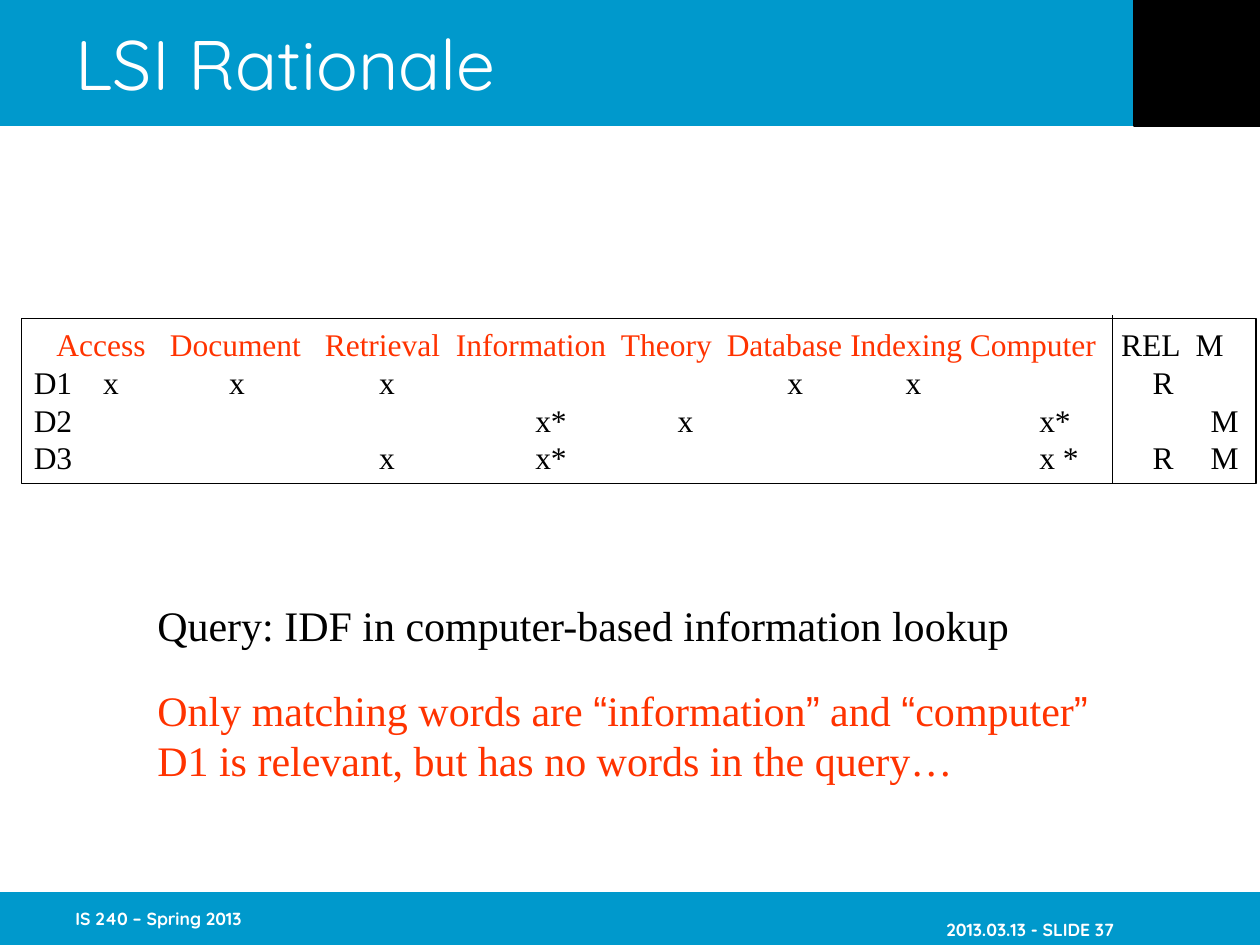
from pptx import Presentation
from pptx import util as u
from pptx.dml.color import RGBColor
from pptx.enum import shapes, text
from pptx.oxml.ns import qn
from lxml import etree

In = u.Inches
BLUE = RGBColor(0x00, 0x99, 0xCC)
RED = RGBColor(0xFF, 0x33, 0x00)
BLACK = RGBColor(0, 0, 0)
WHITE = RGBColor(0xFF, 0xFF, 0xFF)
SANS, SERIF, QUOTE = "Quicksand", "Times New Roman", "Arial"

# Content
TITLE = "LSI Rationale"
FOOT = "IS 240 – Spring 2013"
STAMP = "2013.03.13 - SLIDE 37"
TERMS = ["Access", "Document", "Retrieval", "Information",
         "Theory", "Database", "Indexing", "Computer"]
JUDGED = ["REL", "M"]
DOCS = [
    ["D1", "x", "x", "x", "", "", "x", "x", "", "R"],
    ["D2", "", "", "", "x*", "x", "", "", "x*", "", "M"],
    ["D3", "", "", "x", "x*", "", "", "", "x *", "R", "M"],
]
QUERY = "Query: IDF in computer-based information lookup"
NOTES = [
    ["Only matching words are ", "“", "information", "”", " and ",
     "“", "computer", "”"],
    ["D1 is relevant, but has no words in the query…"],
]

# Tab stops, in inches from the left edge of the grid's text
HEADS = [0.18, 1.08, 2.31, 3.35, 4.66, 5.5, 6.48, 7.43, 8.63, 9.22]
MARKS = [0.55, 1.55, 2.74, 3.98, 5.11, 5.98, 6.92, 7.98, 8.88, 9.34]

prs = Presentation()
prs.slide_width, prs.slide_height = In(10), In(7.5)
slide = prs.slides.add_slide(prs.slide_layouts[5])


def style(run, size, color, face=SERIF, bold=False):
    font = run.font
    font.size, font.name, font.bold = u.Pt(size), face, bold
    font.color.rgb = color


def rect(x, y, w, h, fill=None, line=None):
    box = slide.shapes.add_shape(shapes.MSO_SHAPE.RECTANGLE,
                                 In(x), In(y), In(w), In(h))
    box.shadow.inherit = False
    if fill is None:
        box.fill.background()
    else:
        box.fill.solid()
        box.fill.fore_color.rgb = fill
    if line is None:
        box.line.fill.background()
    else:
        box.line.color.rgb = line
        box.line.width = u.Pt(0.75)
    return box


def label(x, y, w, h):
    frame = slide.shapes.add_textbox(In(x), In(y), In(w), In(h)).text_frame
    frame.word_wrap = False
    return frame


def footer(x, words, align, left, top, right):
    frame = label(x, 7.08, 2.08, 0.42)
    frame.vertical_anchor = text.MSO_ANCHOR.MIDDLE
    frame.margin_left, frame.margin_right = In(left), In(right)
    frame.margin_top = In(top)
    frame.margin_bottom = 0
    frame.word_wrap = True
    frame.text = words
    para = frame.paragraphs[0]
    para.alignment = align
    style(para.runs[0], 10, WHITE, SANS, True)


def tabs(para, stops):
    group = etree.SubElement(para._p.get_or_add_pPr(), qn("a:tabLst"))
    for stop in stops:
        etree.SubElement(group, qn("a:tab"), pos=str(In(stop)), algn="l")


def fill_rows(frame, rows, size):
    """Write rows of (words, color, face) runs, one paragraph a row."""
    for i, row in enumerate(rows):
        para = frame.paragraphs[0] if i == 0 else frame.add_paragraph()
        for words, color, face in row:
            run = para.add_run()
            run.text = words
            style(run, size, color, face)


# Bars and footers
rect(0, 0, 10, 1, BLUE)
rect(0, 7.08, 10, 0.42, BLUE)
rect(9, 0, 1, 1, BLACK, BLACK)
footer(7.42, STAMP, text.PP_ALIGN.RIGHT, 0, 0.18, 0.66)
footer(0.5, FOOT, text.PP_ALIGN.LEFT, 0.1, 0, 0)

# Title, brought in front of its bar
title = slide.shapes.title
title.left, title.top, title.width, title.height = In(0.5), In(0), In(8.5), In(1)
title.text_frame.text = TITLE
title.text_frame.vertical_anchor = text.MSO_ANCHOR.MIDDLE
title.text_frame.paragraphs[0].alignment = text.PP_ALIGN.LEFT
style(title.text_frame.paragraphs[0].runs[0], 40, WHITE, SANS)
slide.shapes._spTree.append(title._element)

# Term grid
grid = rect(0.17, 2.53, 9.8, 1.31, line=BLACK).text_frame
grid.word_wrap = True
grid.vertical_anchor = text.MSO_ANCHOR.TOP
grid.margin_right = 0
head = [("\t" + "\t".join(TERMS), RED, SERIF),
        ("\t" + "\t".join(JUDGED), BLACK, SERIF)]
fill_rows(grid, [head] + [[("\t".join(doc), BLACK, SERIF)] for doc in DOCS], 18)
for i, para in enumerate(grid.paragraphs):
    para.alignment = text.PP_ALIGN.LEFT
    tabs(para, MARKS if i else HEADS)

# Query, divider and remarks
fill_rows(label(1.15, 4.71, 6.97, 0.5), [[(QUERY, BLACK, SERIF)]], 24)
rule = slide.shapes.add_connector(shapes.MSO_CONNECTOR.STRAIGHT,
                                  In(8.83), In(2.5), In(8.83), In(3.83))
rule.line.color.rgb = BLACK
rule.line.width = u.Pt(0.75)
etree.SubElement(rule._element.spPr, qn("a:effectLst"))
fill_rows(label(1.15, 5.38, 7.73, 0.9),
          [[(part, RED, QUOTE if part in "“”" else SERIF) for part in row]
           for row in NOTES], 24)

prs.save("out.pptx")
